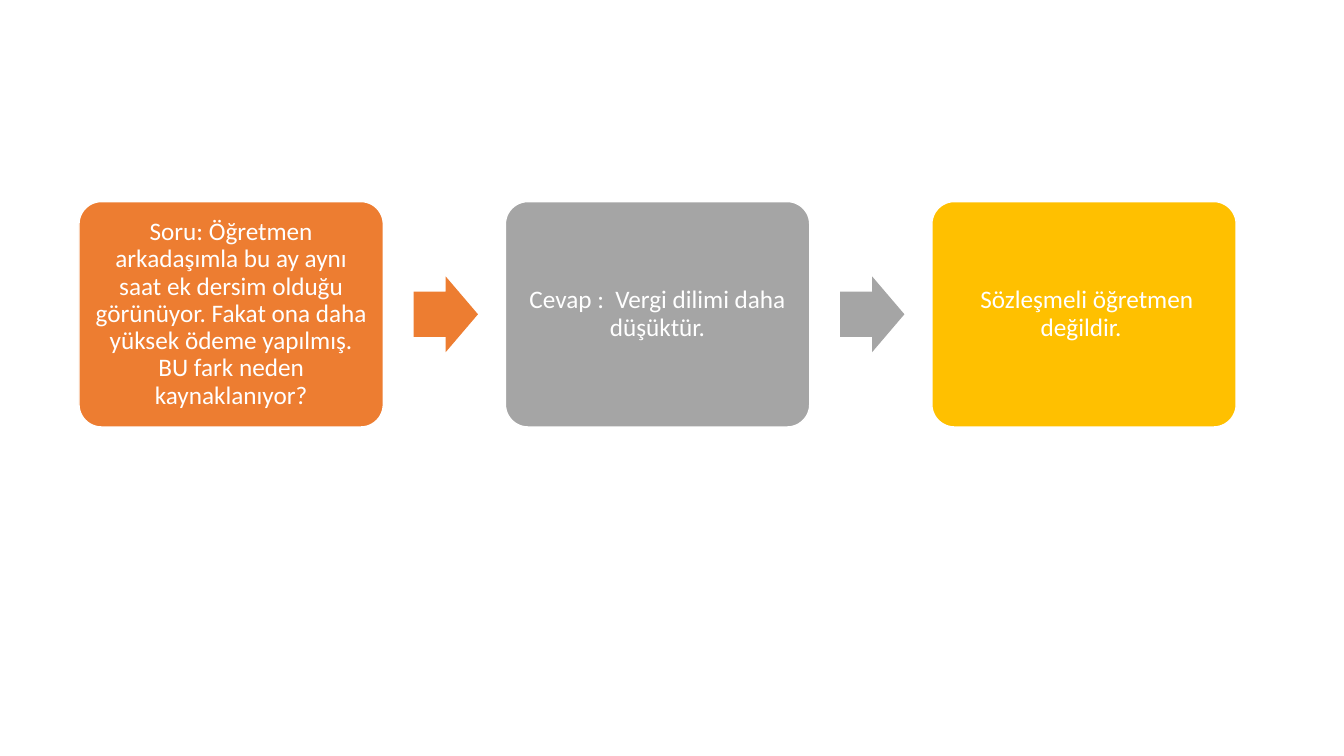
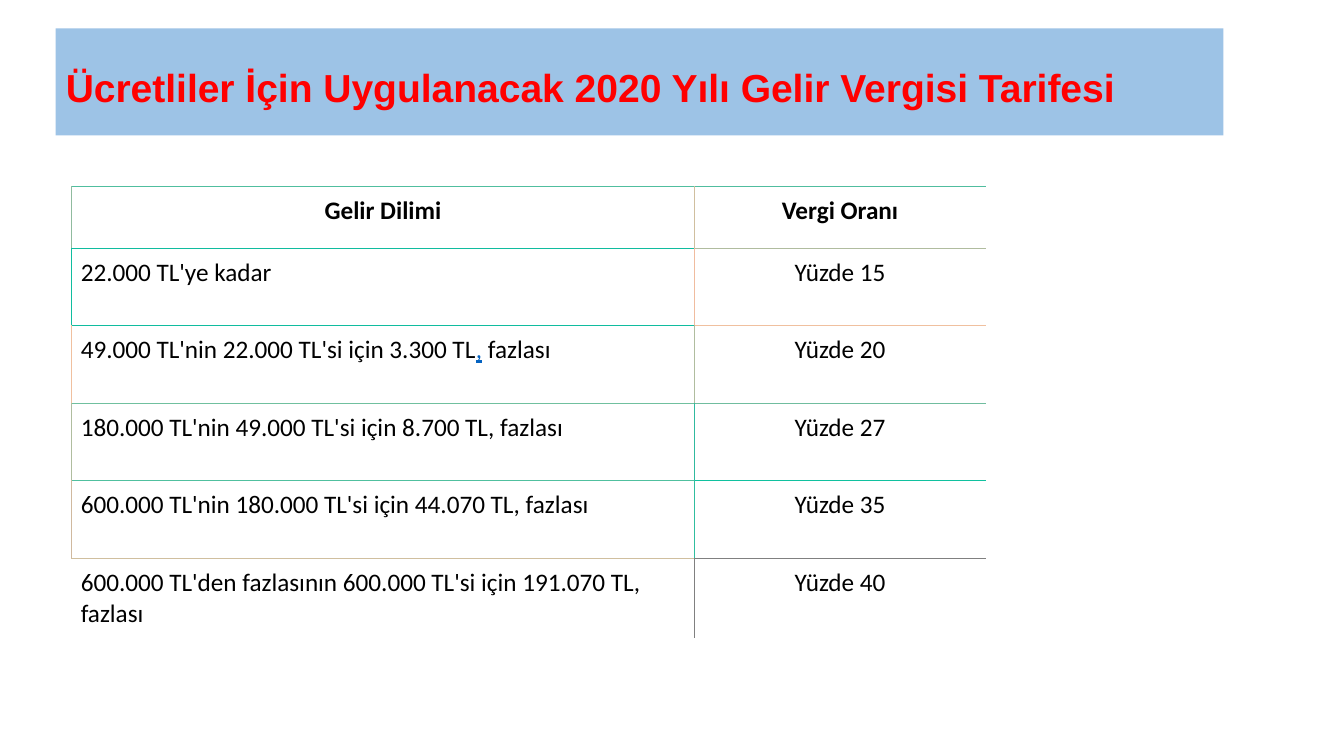
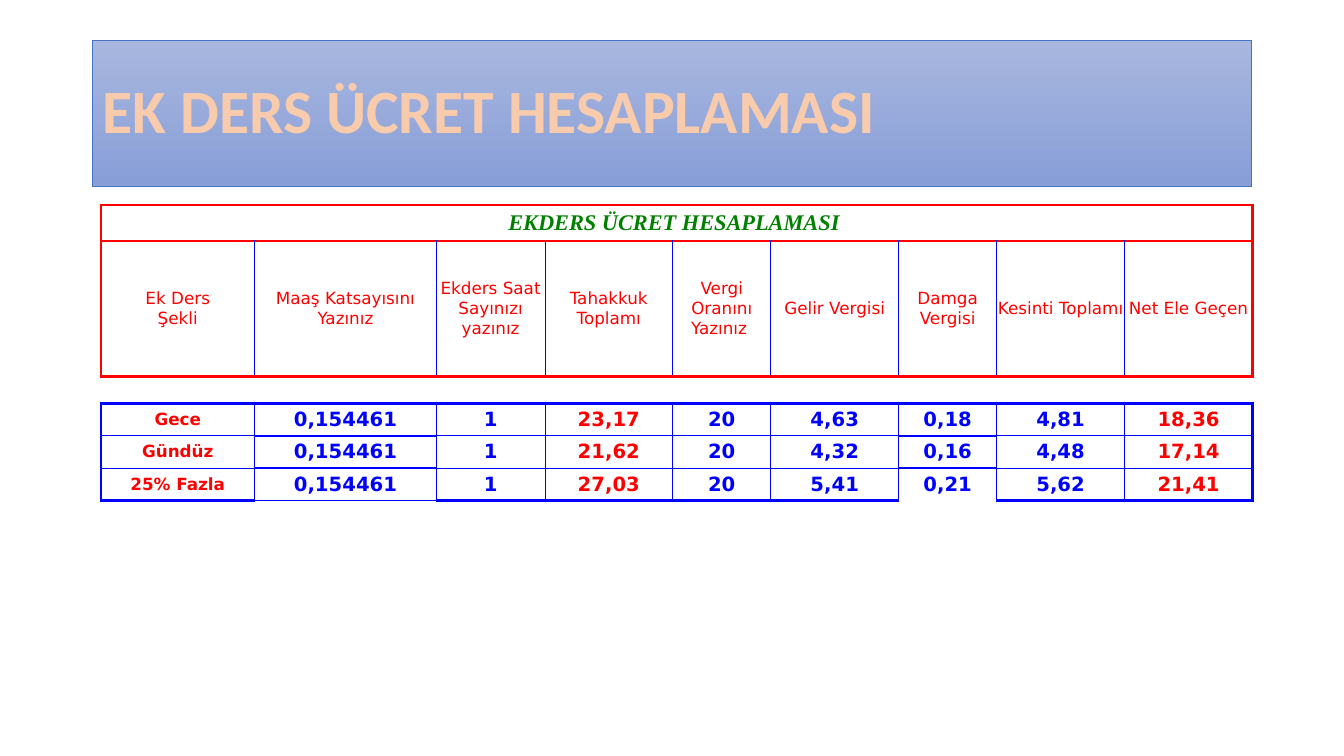
from lxml import etree
from pptx import Presentation
from pptx import util as u
from pptx.dml.color import RGBColor
from pptx.enum import shapes, text
from pptx.oxml import ns

COLORS = {
    "white": "FFFFFF", "black": "000000", "red": "FF0000", "blue": "0000FF",
    "green": "008000", "orange": "ED7D31", "gray": "A5A5A5", "gold": "FFC000",
    "band": "9DC3E6", "band_top": "A8B7DF", "band_bottom": "889ED7",
    "band_line": "4472C4", "peach": "F8CBAD", "link": "0563C1",
}
RGB = {name: RGBColor.from_string(value) for name, value in COLORS.items()}
PLAIN_TABLE = "{2D5ABB26-0587-4C30-8999-92F81FD0307C}"
CENTER = text.PP_ALIGN.CENTER
MIDDLE = text.MSO_ANCHOR.MIDDLE


def write(holder, words, font, size, color, bold=False, align=None, margins=(7.2, 3.6)):
    frame = holder.text_frame
    frame.word_wrap = True
    frame.text = words
    holder_margins = holder if hasattr(holder, "margin_left") else frame
    holder_margins.margin_left = holder_margins.margin_right = u.Pt(margins[0])
    holder_margins.margin_top = holder_margins.margin_bottom = u.Pt(margins[1])
    paragraph = frame.paragraphs[0]
    paragraph.alignment = align
    paragraph.font.name = font
    paragraph.font.size = u.Pt(size)
    paragraph.font.bold = bold
    paragraph.font.color.rgb = RGB[color]
    return paragraph


def set_borders(cell, borders):
    properties = cell._tc.get_or_add_tcPr()
    for index, side in enumerate("LRTB"):
        color, width = borders.get(side) or (None, 0)
        line = etree.Element(ns.qn(f"a:ln{side}"), w=str(u.Pt(width)))
        if color:
            fill = etree.SubElement(line, ns.qn("a:solidFill"))
            etree.SubElement(fill, ns.qn("a:srgbClr"), val=color)
        else:
            etree.SubElement(line, ns.qn("a:noFill"))
        properties.insert(index, line)


presentation = Presentation()
presentation.slide_width = u.Pt(960)
presentation.slide_height = u.Pt(540)
title_layout, blank_layout = presentation.slide_layouts[5], presentation.slide_layouts[6]

slide = presentation.slides.add_slide(blank_layout)
steps = [
    ("Soru: Öğretmen arkadaşımla bu ay aynı saat ek dersim olduğu görünüyor. "
     "Fakat ona daha yüksek ödeme yapılmış. BU fark neden kaynaklanıyor?", "orange"),
    ("Cevap :  Vergi dilimi daha düşüktür.", "gray"),
    (" Sözleşmeli öğretmen değildir. ", "gold"),
]
for index, (words, color) in enumerate(steps):
    left = 56.4 + index * 304.6
    box = slide.shapes.add_shape(shapes.MSO_SHAPE.ROUNDED_RECTANGLE,
                                 u.Pt(left), u.Pt(144), u.Pt(217.4), u.Pt(161))
    box.adjustments[0] = 0.1
    box.line.color.rgb = RGB["white"]
    box.line.width = u.Pt(1)
    paragraph = write(box, words, "Calibri", 18, "white", align=CENTER, margins=(5, 5))
    paragraph.line_spacing = 0.9
    box.text_frame.vertical_anchor = MIDDLE
    parts = [box]
    if index < len(steps) - 1:
        arrow = slide.shapes.add_shape(shapes.MSO_SHAPE.RIGHT_ARROW,
                                       u.Pt(left + 239), u.Pt(197.5), u.Pt(46), u.Pt(54))
        arrow.adjustments[0] = 0.6
        arrow.adjustments[1] = 0.5
        arrow.line.fill.background()
        parts.append(arrow)
    for shape in parts:
        shape.shadow.inherit = False
        shape.fill.solid()
        shape.fill.fore_color.rgb = RGB[color]

titles = [
    ("Ücretliler İçin Uygulanacak 2020 Yılı Gelir Vergisi Tarifesi",
     "Arial", 27.9, "red", (39.8, 20.2, 834, 76.6)),
    ("EK DERS ÜCRET HESAPLAMASI", "Calibri", 44, "peach", (66.2, 28.8, 828, 104.4)),
]
title_slides = []
for words, font, size, color, place in titles:
    slide = presentation.slides.add_slide(title_layout)
    title = slide.shapes.title
    title.left, title.top, title.width, title.height = map(u.Pt, place)
    paragraph = write(title, words, font, size, color, True, text.PP_ALIGN.LEFT)
    paragraph.line_spacing = 0.9
    title.text_frame.auto_size = text.MSO_AUTO_SIZE.NONE
    title.text_frame.vertical_anchor = MIDDLE
    title_slides.append(slide)
tax_slide, pay_slide = title_slides

tax_title = tax_slide.shapes.title
tax_title.fill.solid()
tax_title.fill.fore_color.rgb = RGB["band"]
tax_title.text_frame.margin_top = u.Pt(15)

pay_title = pay_slide.shapes.title
pay_title.fill.gradient()
pay_title.fill.gradient_angle = 270
for stop, position, color in zip(pay_title.fill.gradient_stops, (0, 1), ("band_top", "band_bottom")):
    stop.position = position
    stop.color.rgb = RGB[color]
pay_title.line.color.rgb = RGB["band_line"]
pay_title.line.width = u.Pt(0.5)
run_properties = pay_title.text_frame.paragraphs[0].runs[0]._r.get_or_add_rPr()
outline = etree.SubElement(run_properties, ns.qn("a:ln"), w=str(u.Pt(1.75)))
outline_fill = etree.SubElement(outline, ns.qn("a:solidFill"))
etree.SubElement(outline_fill, ns.qn("a:srgbClr"), val=COLORS["orange"])

tax_rows = [
    ("Gelir Dilimi", "Vergi Oranı"),
    ("22.000 TL'ye kadar", "Yüzde 15"),
    ("49.000 TL'nin 22.000 TL'si için 3.300 TL", "Yüzde 20"),
    ("180.000 TL'nin 49.000 TL'si için 8.700 TL, fazlası", "Yüzde 27"),
    ("600.000 TL'nin 180.000 TL'si için 44.070 TL, fazlası", "Yüzde 35"),
    ("600.000 TL'den fazlasının 600.000 TL'si için 191.070 TL, fazlası", "Yüzde 40"),
]
tax_across = [
    ("50BE9F", "50BD9F"), ("10BC9F", "B0BC9F"), ("10BC9F", "F0C09F"), ("70C09F", "70BD9F"),
    ("50C09F", "10C19F"), ("D0BF9F", "808080"), (None, None),
]
tax_down = [
    ("90BB9F", "D0BF9F", None), ("10BD9F", "F0BC9F", None), ("F0C09F", "B0BD9F", None),
    ("B0BD9F", "30BA9F", None), ("D0B99F", "30BE9F", None), (None, "808080", None),
]
pay_headings = [
    "Ek Ders\vŞekli", "Maaş Katsayısını\vYazınız", "Ekders Saat Sayınızı yazınız",
    "Tahakkuk Toplamı", "Vergi Oranını Yazınız ", "Gelir Vergisi", "Damga Vergisi",
    "Kesinti Toplamı", "Net Ele Geçen",
]
pay_rows = {
    0: ["EKDERS ÜCRET HESAPLAMASI "],
    1: pay_headings,
    3: ["Gece", "0,154461", "1", "23,17", "20", "4,63", "0,18", "4,81", "18,36"],
    4: ["Gündüz", "0,154461", "1", "21,62", "20", "4,32", "0,16", "4,48", "17,14"],
    5: ["25% Fazla", "0,154461", "1", "27,03", "20", "5,41", "0,21", "5,62", "21,41"],
}
tables = []
for slide, left, top, widths, heights in [
    (tax_slide, 51.1, 133.2, [445, 208], [44] + [55.4] * 5),
    (pay_slide, 72.2, 146.4, [109.6, 130, 77.4, 91.4, 70, 91.4, 70, 91.4, 91.4],
     [25.7, 96.8, 19.2] + [23.2] * 3 + [16.6] * 4),
]:
    table = slide.shapes.add_table(len(heights), len(widths), u.Pt(left), u.Pt(top),
                                   u.Pt(sum(widths)), u.Pt(sum(heights))).table
    table.first_row = table.horz_banding = False
    table._tbl.tblPr.find(ns.qn("a:tableStyleId")).text = PLAIN_TABLE
    for column, width in zip(table.columns, widths):
        column.width = u.Pt(width)
    for row, height in zip(table.rows, heights):
        row.height = u.Pt(height)
    tables.append(table)
tax_table, pay_table = tables

for r, row in enumerate(tax_rows):
    for c, words in enumerate(row):
        cell = tax_table.cell(r, c)
        cell.fill.background()
        align = CENTER if r == 0 or c == 1 else text.PP_ALIGN.LEFT
        write(cell, words, "Calibri", 18, "black", r == 0, align, (6.6, 6.6))
        sides = dict(L=tax_down[r][c], R=tax_down[r][c + 1],
                     T=tax_across[r][c], B=tax_across[r + 1][c])
        set_borders(cell, {side: (color, 0.75) for side, color in sides.items() if color})
paragraph = tax_table.cell(2, 0).text_frame.paragraphs[0]
comma = paragraph.add_run()
comma.text = ","
comma.font.underline = True
comma.font.color.rgb = RGB["link"]
paragraph.add_run().text = " fazlası"

thick_red = (COLORS["red"], 2)
thick_blue = (COLORS["blue"], 2)
thin_blue = (COLORS["blue"], 0.5)
pay_across = [[thick_red] * 9 for _ in range(3)] + [[thick_blue] * 9]
for _ in range(2):
    pay_across.append([thick_blue if c in (1, 6) else thin_blue for c in range(9)])
pay_across.append([{1: thin_blue, 6: None}.get(c, thick_blue) for c in range(9)])
pay_across += [[None] * 9 for _ in range(4)]
edges = {0: thick_red, 1: thick_red, 3: thick_blue, 4: thick_blue, 5: thick_blue}

pay_table.cell(0, 0).merge(pay_table.cell(0, 8))
for r in range(10):
    words_in_row = pay_rows.get(r, [])
    for c in range(9):
        cell = pay_table.cell(r, c)
        cell.fill.solid()
        cell.fill.fore_color.rgb = RGB["white"]
        cell.vertical_anchor = MIDDLE
        words = words_in_row[c] if c < len(words_in_row) else ""
        font, size, color = "DejaVu Sans", 14, "blue"
        if r == 0:
            font, size, color = "Times New Roman", 16, "green"
        elif not words:
            size = 8
        elif r == 1 or c == 0:
            size, color = 12, "red"
        elif c in (3, 8):
            color = "red"
        paragraph = write(cell, words, font, size, color, r != 1, CENTER, (0.7, 0.5))
        paragraph.font.italic = r == 0
        edge = edges.get(r)
        inner = thin_blue if edge and r else None
        set_borders(cell, dict(L=edge if c == 0 else inner,
                               R=edge if c == 8 or r == 0 and c == 0 else inner,
                               T=pay_across[r][c], B=pay_across[r + 1][c]))

presentation.save("out.pptx")
